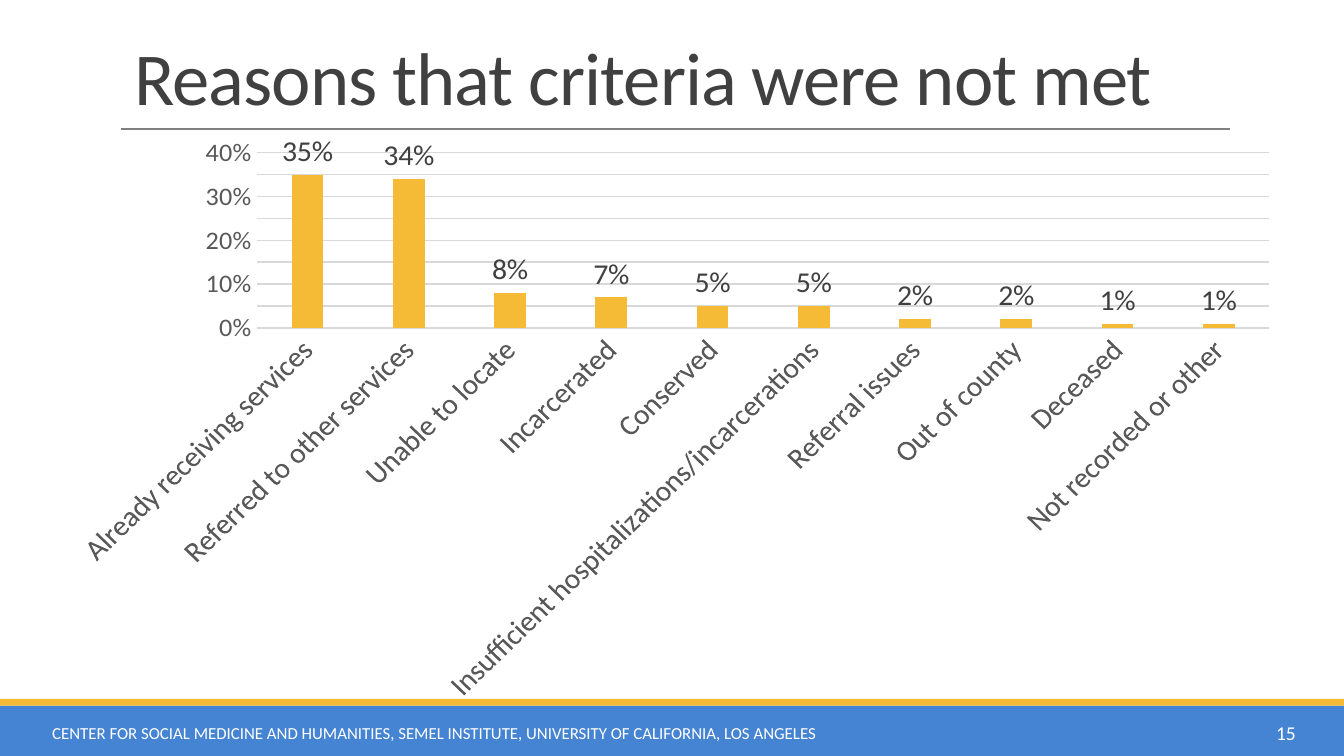
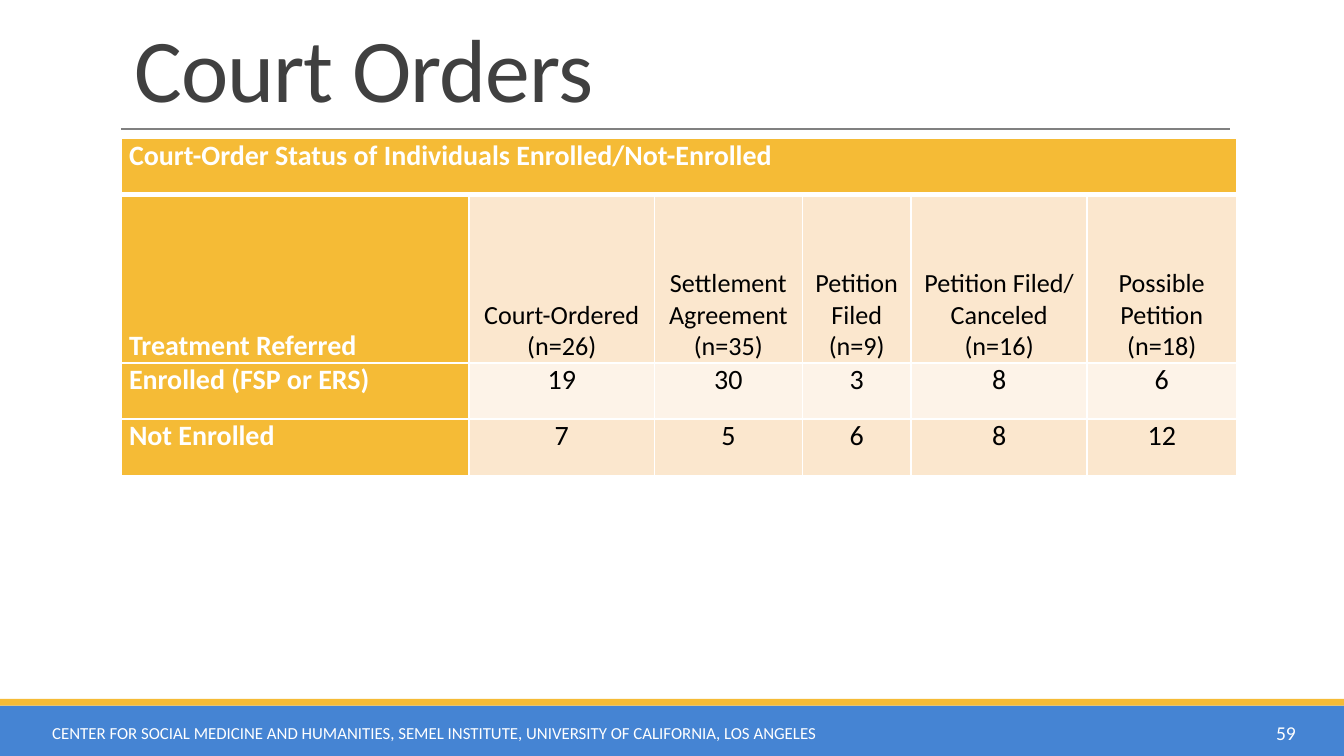
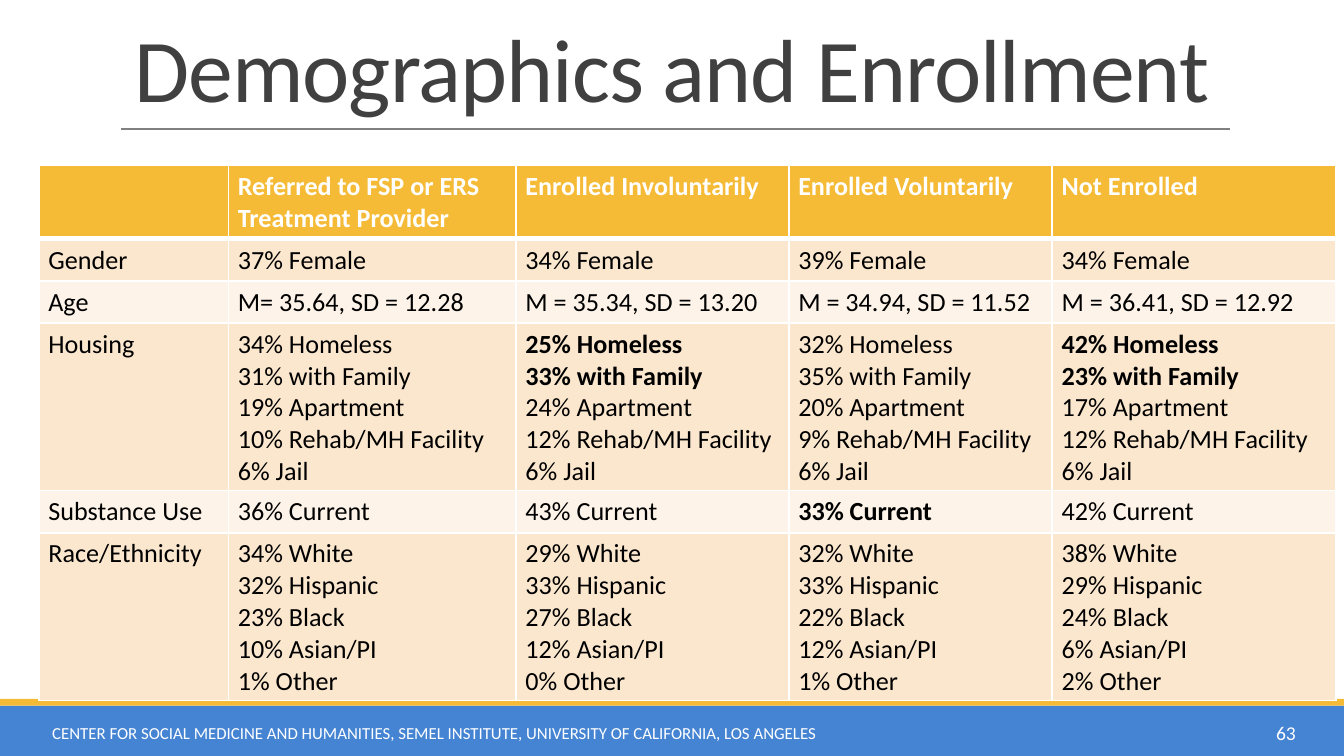
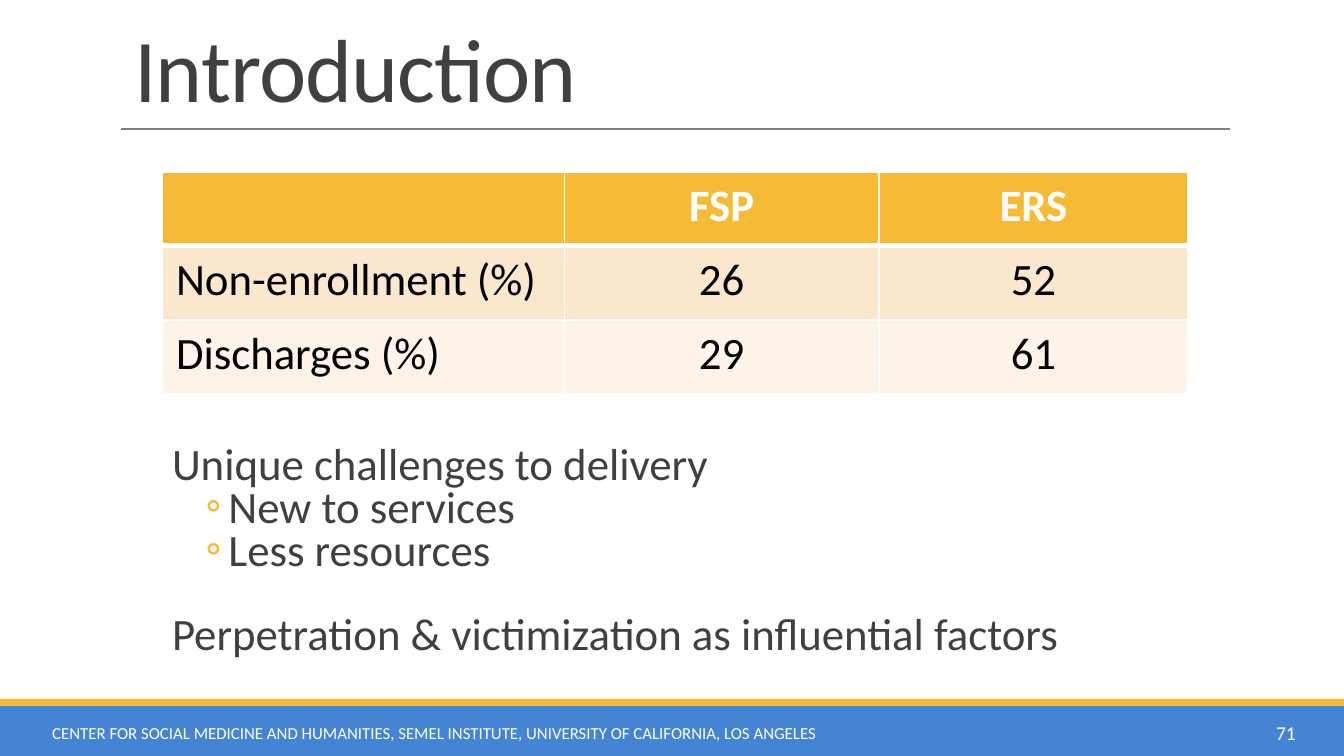
from lxml.etree import SubElement
from pptx import Presentation
from pptx.chart.data import CategoryChartData
from pptx.dml.color import RGBColor
from pptx.enum.chart import XL_CHART_TYPE, XL_LABEL_POSITION, XL_TICK_MARK
from pptx.enum.shapes import MSO_CONNECTOR, MSO_SHAPE
from pptx.enum.text import MSO_ANCHOR, MSO_AUTO_SIZE, PP_ALIGN
from pptx.oxml.ns import qn
from pptx.util import Inches, Pt

BLUE, GOLD, CREAM, PALE = "4584D3", "F5BB36", "FBE7CE", "FDF3E8"
WHITE, BLACK, DARK, GREY, RULE, GRID = "FFFFFF", "000000", "404040", "595959", "808080", "D9D9D9"
FOOTER = ("CENTER FOR SOCIAL MEDICINE AND HUMANITIES, SEMEL INSTITUTE, "
          "UNIVERSITY OF CALIFORNIA, LOS ANGELES")


def rgb(value):
    return RGBColor.from_string(value)


def style(font, color, size, **values):
    font.color.rgb = rgb(color)
    for key, value in {"name": "Calibri", "size": Pt(size), **values}.items():
        setattr(font, key, value)


prs = Presentation()
prs.slide_width = Inches(10)
prs.slide_height = prs.slide_width * 9 // 16

# Slides with bands, rule, title, footer and number
pages = [("Reasons that criteria were not met", 40, "15", 5),
         ("Court Orders", 48, "59", 5),
         ("Demographics and Enrollment", 48, "63", 5),
         ("Introduction", 48, "71", 1)]
slides = []
for title, size, number, layout in pages:
    s = prs.slides.add_slide(prs.slide_layouts[layout])
    slides.append(s)

    for top, height, color in [(5.25, 0.38, BLUE), (5.2, 0.05, GOLD)]:
        sp = s.shapes.add_shape(MSO_SHAPE.RECTANGLE, 0, Inches(top), prs.slide_width, Inches(height))
        sp.shadow.inherit = False
        sp.fill.solid()
        sp.fill.fore_color.rgb = rgb(color)
        sp.line.fill.background()

    rule = s.shapes.add_connector(MSO_CONNECTOR.STRAIGHT, Inches(0.9), Inches(0.96),
                                  Inches(9.15), Inches(0.96))
    rule.line.color.rgb = rgb(RULE)
    rule.line.width = Pt(1)
    SubElement(rule._element.spPr, qn("a:effectLst"))

    sp = s.shapes.title
    sp.left, sp.top, sp.width, sp.height = map(Inches, (0.9, 0.09, 8.25, 0.86))
    tf = sp.text_frame
    tf.auto_size = MSO_AUTO_SIZE.NONE
    tf.vertical_anchor = MSO_ANCHOR.BOTTOM
    p = tf.paragraphs[0]
    p.alignment, p.line_spacing = PP_ALIGN.LEFT, 0.85
    r = p.add_run()
    r.text = title
    style(r.font, DARK, size)
    r.font._element.set("spc", "-50")

    for text, left, width, size, align in [(FOOTER, 0.29, 6.67, 9, PP_ALIGN.LEFT),
                                           (number, 8.66, 1.08, 10.5, PP_ALIGN.RIGHT)]:
        tf = s.shapes.add_textbox(Inches(left), Inches(5.3), Inches(width), Inches(0.3)).text_frame
        tf.word_wrap = True
        tf.vertical_anchor = MSO_ANCHOR.MIDDLE
        p = tf.paragraphs[0]
        p.alignment = align
        r = p.add_run()
        r.text = text
        style(r.font, WHITE, size)

# Column chart of reasons
reasons = {"Already receiving services": 0.35, "Referred to other services": 0.34,
           "Unable to locate": 0.08, "Incarcerated": 0.07, "Conserved": 0.05,
           "Insufficient hospitalizations/incarcerations": 0.05, "Referral issues": 0.02,
           "Out of county": 0.02, "Deceased": 0.01, "Not recorded or other": 0.01}
data = CategoryChartData(number_format="0%")
data.categories = list(reasons)
data.add_series("Series 1", list(reasons.values()))
chart = slides[0].shapes.add_chart(XL_CHART_TYPE.COLUMN_CLUSTERED, Inches(0.39), Inches(1),
                                   Inches(9.24), Inches(4.23), data).chart
chart.has_title = chart.has_legend = False
style(chart.font, BLACK, 10)

plot = chart.plots[0]
plot.vary_by_categories = False
plot.gap_width, plot.overlap = 219, -27
fill = plot.series[0].format.fill
fill.solid()
fill.fore_color.rgb = rgb(GOLD)
plot.has_data_labels = True
labels = plot.data_labels
for key, value in {"show_value": True, "position": XL_LABEL_POSITION.OUTSIDE_END,
                   "number_format": "0%", "number_format_is_linked": False}.items():
    setattr(labels, key, value)
style(labels.font, DARK, 16)

for axis, size in [(chart.category_axis, 16), (chart.value_axis, 14)]:
    axis.major_tick_mark = axis.minor_tick_mark = XL_TICK_MARK.NONE
    style(axis.tick_labels.font, GREY, size)
cat_axis, val_axis = chart.category_axis, chart.value_axis
cat_axis._element.txPr.bodyPr.set("rot", "-2700000")
val_axis.minimum_scale, val_axis.maximum_scale, val_axis.major_unit = 0, 0.4, 0.05
val_axis.tick_labels.number_format = "0%"
val_axis.tick_labels.number_format_is_linked = False
val_axis.format.line.fill.background()
for line in (cat_axis.format.line, val_axis.major_gridlines.format.line):
    line.color.rgb = rgb(GRID)
    line.width = Pt(0.75)

# Table contents
court_rows = [
    ["Court-Order Status of Individuals Enrolled/Not-Enrolled", "", "", "", "", ""],
    ["Treatment Referred", "Court-Ordered\n(n=26)", "Settlement\nAgreement\n(n=35)",
     "Petition\nFiled\n(n=9)", "Petition Filed/\nCanceled\n(n=16)", "Possible\nPetition\n(n=18)"],
    ["Enrolled (FSP or ERS)", "19", "30", "3", "8", "6"],
    ["Not Enrolled", "7", "5", "6", "8", "12"]]
demographic_rows = [
    ["", "Referred to FSP or ERS Treatment Provider", "Enrolled Involuntarily",
     "Enrolled Voluntarily", "Not Enrolled"],
    ["Gender", "37% Female", "34% Female", "39% Female", "34% Female"],
    ["Age", "M= 35.64, SD = 12.28", "M = 35.34, SD = 13.20", "M = 34.94, SD = 11.52",
     "M = 36.41, SD = 12.92"],
    ["Housing",
     "34% Homeless\n31% with Family\n19% Apartment\n10% Rehab/MH Facility\n6% Jail",
     "25% Homeless\n33% with Family\n24% Apartment\n12% Rehab/MH Facility\n6% Jail",
     "32% Homeless\n35% with Family\n20% Apartment\n9% Rehab/MH Facility\n6% Jail",
     "42% Homeless\n23% with Family\n17% Apartment\n12% Rehab/MH Facility\n6% Jail"],
    ["Substance Use", "36% Current", "43% Current", "33% Current", "42% Current"],
    ["Race/Ethnicity",
     "34% White\n32% Hispanic\n23% Black\n10% Asian/PI\n1% Other",
     "29% White\n33% Hispanic\n27% Black\n12% Asian/PI\n0% Other",
     "32% White\n33% Hispanic\n22% Black\n12% Asian/PI\n1% Other",
     "38% White\n29% Hispanic\n24% Black\n6% Asian/PI\n2% Other"]]
program_rows = [["", "FSP", "ERS"],
                ["Non-enrollment (%)", "26", "52"],
                ["Discharges (%)", "29", "61"]]
emphasis = {"25% Homeless", "33% with Family", "42% Homeless", "23% with Family", "33% Current"}

# Tables: slide, left, top, column widths, row heights, rows, size, insets, gold column, centred
tables = [
    (slides[1], 0.9, 1.03, [2.59, 1.38, 1.1, 0.81, 1.31, 1.11], [0.42, 1.25, 0.42, 0.42],
     court_rows, 15, (0.06, 0), True, True),
    (slides[2], 0.29, 1.23, [1.41, 2.14, 2.03, 1.96, 2.11], [0.53, 0.3, 0.25, 1.2, 0.3, 0.97],
     demographic_rows, 14, (0.07, 0.04), False, False),
    (slides[3], 1.21, 1.28, [2.99, 2.34, 2.3], [0.55] * 3,
     program_rows, 24, (0.1, 0.05), False, True)]
grids = []
for s, left, top, widths, heights, rows, size, insets, gold_column, centred in tables:
    table = s.shapes.add_table(len(rows), len(widths), Inches(left), Inches(top),
                               Inches(sum(widths)), Inches(sum(heights))).table
    grids.append(table)
    for column, width in zip(table.columns, widths):
        column.width = Inches(width)
    for i, row in enumerate(rows):
        table.rows[i].height = Inches(heights[i])
        for j, text in enumerate(row):
            cell = table.cell(i, j)
            cell.margin_left = cell.margin_right = Inches(insets[0])
            cell.margin_top = cell.margin_bottom = Inches(insets[1])
            head = i == 0 or (gold_column and j == 0)

            # Borders, thick under the heading row
            edges = {"lnL": 1, "lnR": 1, "lnT": 1, "lnB": 1}
            if i == 0:
                edges["lnB"] = 3
            if i == 1:
                del edges["lnT"]
            for edge, width in edges.items():
                ln = SubElement(cell._tc.get_or_add_tcPr(), qn("a:" + edge), w=str(Pt(width)))
                SubElement(SubElement(ln, qn("a:solidFill")), qn("a:srgbClr"), val=WHITE)
            cell.fill.solid()
            cell.fill.fore_color.rgb = rgb(GOLD if head else CREAM if i % 2 else PALE)

            cell.text = text
            for p in cell.text_frame.paragraphs:
                p.alignment = PP_ALIGN.CENTER if centred and j else PP_ALIGN.LEFT
                for r in p.runs:
                    style(r.font, WHITE if head else BLACK, size, bold=head or r.text in emphasis)

# Court table: one heading across, column names at the bottom
court = grids[0]
court.cell(0, 0).merge(court.cell(0, 5))
for j in range(6):
    cell = court.cell(1, j)
    cell.vertical_anchor = MSO_ANCHOR.BOTTOM
    for p in cell.text_frame.paragraphs:
        p.runs[0].font.size = Pt(14 if j else 15)

# List under the program table
sp = slides[3].placeholders[1]
sp.left, sp.top, sp.width, sp.height = map(Inches, (1.21, 3.27, 8.25, 1.7))
tf = sp.text_frame
tf.auto_size = MSO_AUTO_SIZE.NONE
tf.margin_left = tf.margin_right = 0
points = [("Unique challenges to delivery", 0, 0), ("New to services", 1, 0),
          ("Less resources", 1, 0),
          ("Perpetration & victimization as influential factors", 0, 22)]
for i, (text, level, before) in enumerate(points):
    p = tf.add_paragraph() if i else tf.paragraphs[0]
    p.level, p.line_spacing, p.space_before = level, 0.8, Pt(before)
    pPr = p._p.get_or_add_pPr()
    pPr.set("marL", str(Inches(0.49 if level else 0.07)))
    pPr.set("indent", str(Inches(-0.17 if level else 0)))
    if level:
        SubElement(SubElement(pPr, qn("a:buClr")), qn("a:srgbClr"), val=GOLD)
        SubElement(pPr, qn("a:buFont"), typeface="Calibri")
        SubElement(pPr, qn("a:buChar"), char="◦")
    else:
        SubElement(pPr, qn("a:buNone"))
    r = p.add_run()
    r.text = text
    style(r.font, DARK, 24)

prs.save("out.pptx")
